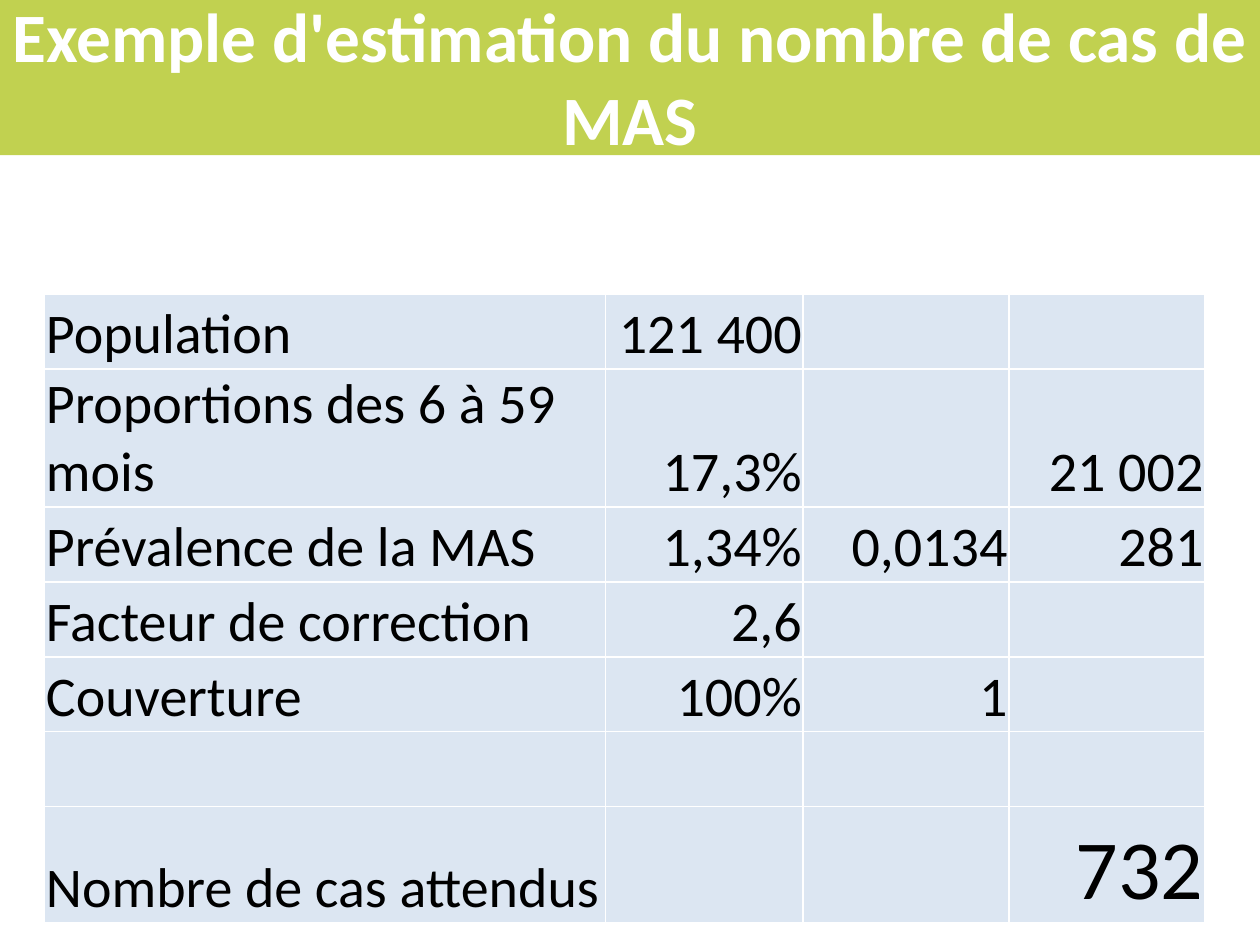
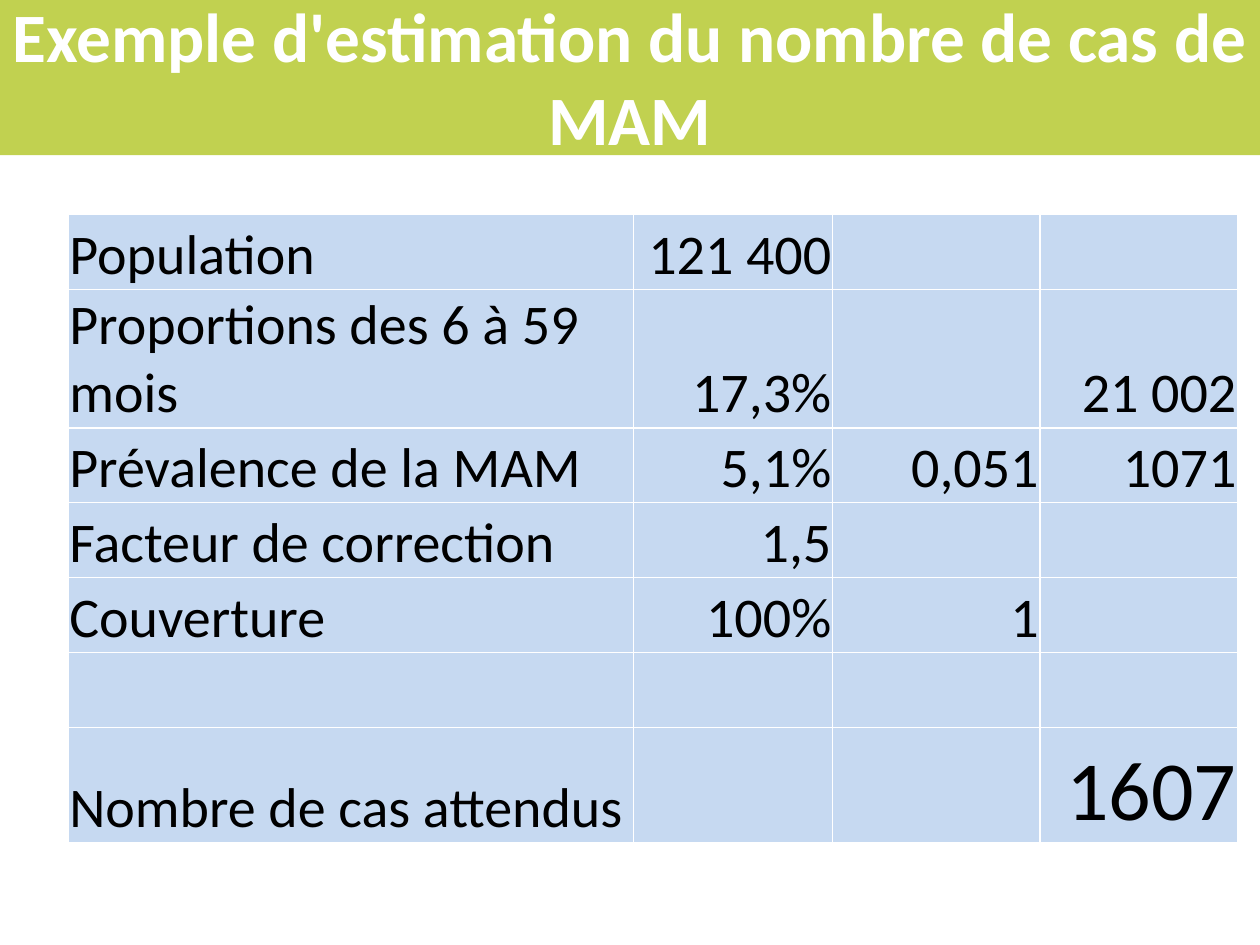
from pptx import Presentation
from pptx.dml.color import RGBColor
from pptx.enum.shapes import MSO_SHAPE
from pptx.enum.text import MSO_ANCHOR, PP_ALIGN
from pptx.util import Pt

GREEN = RGBColor(0xC1, 0xD1, 0x50)
PALE_BLUE = RGBColor(0xDC, 0xE6, 0xF2)
SKY_BLUE = RGBColor(0xC6, 0xD9, 0xF1)
WHITE = RGBColor(0xFF, 0xFF, 0xFF)
BLACK = RGBColor(0x00, 0x00, 0x00)
FONT = "Calibri"
ROW_H, TOTAL_H = 42.8, 66.2

CASES = [
    ("MAS", PALE_BLUE, 25.5, 168, (320.5, 113, 117.5, 112),
     "1,34%", "0,0134", "281", "2,6", "732"),
    ("MAM", SKY_BLUE, 38.9, 122.7, (323, 114, 118.5, 113),
     "5,1%", "0,051", "1071", "1,5", "1607"),
]


def style_run(p, size, color, bold=False):
    r = p.runs[0]
    r.font.name = FONT
    r.font.size = Pt(size)
    r.font.color.rgb = color
    r.font.bold = bold


prs = Presentation()
prs.slide_width, prs.slide_height = Pt(720), Pt(540)

for name, fill, left, top, widths, rate, ratio, cases, factor, expected in CASES:
    s = prs.slides.add_slide(prs.slide_layouts[6])

    band = s.shapes.add_shape(MSO_SHAPE.RECTANGLE, Pt(0), Pt(-1.4), Pt(720), Pt(90))
    band.shadow.inherit = False
    band.fill.solid()
    band.fill.fore_color.rgb = GREEN
    band.line.fill.background()
    tf = band.text_frame
    tf.word_wrap = True
    tf.margin_left = tf.margin_right = Pt(5)
    tf.vertical_anchor = MSO_ANCHOR.MIDDLE
    p = tf.paragraphs[0]
    p.text = f"Exemple d'estimation du nombre de cas de {name}"
    p.alignment = PP_ALIGN.CENTER
    style_run(p, 39.6, WHITE, True)

    rows = [
        ("Population", "121 400", "", ""),
        ("Proportions des 6 à 59 mois", "17,3%", "", "21 002"),
        (f"Prévalence de la {name}", rate, ratio, cases),
        ("Facteur de correction", factor, "", ""),
        ("Couverture", "100%", "1", ""),
        ("", "", "", ""),
        ("Nombre de cas attendus", "", "", expected),
    ]
    last = len(rows) - 1
    table = s.shapes.add_table(len(rows), len(widths), Pt(left), Pt(top),
                               Pt(sum(widths)), Pt(last * ROW_H + TOTAL_H)).table
    table.first_row = False
    table.horz_banding = False
    for col, width in zip(table.columns, widths):
        col.width = Pt(width)
    for i, row in enumerate(rows):
        table.rows[i].height = Pt(TOTAL_H if i == last else ROW_H)
        for j, text in enumerate(row):
            cell = table.cell(i, j)
            cell.fill.solid()
            cell.fill.fore_color.rgb = fill
            if not text:
                continue
            cell.margin_left = cell.margin_right = cell.margin_top = Pt(0.75)
            cell.margin_bottom = Pt(0)
            cell.vertical_anchor = MSO_ANCHOR.BOTTOM
            p = cell.text_frame.paragraphs[0]
            p.text = text
            p.alignment = PP_ALIGN.RIGHT if j else PP_ALIGN.LEFT
            style_run(p, 48 if text == expected else 32, BLACK)

prs.save("out.pptx")
